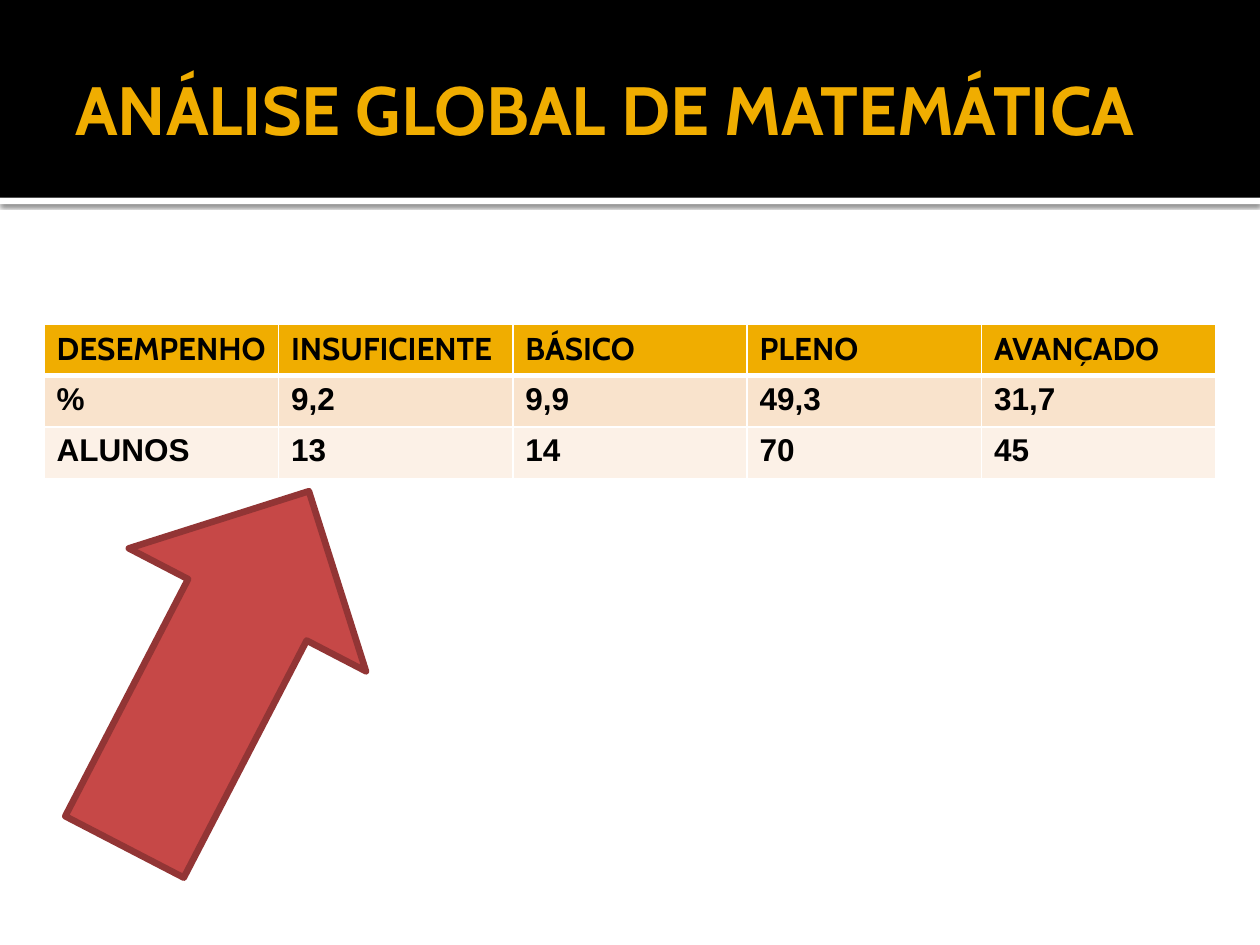
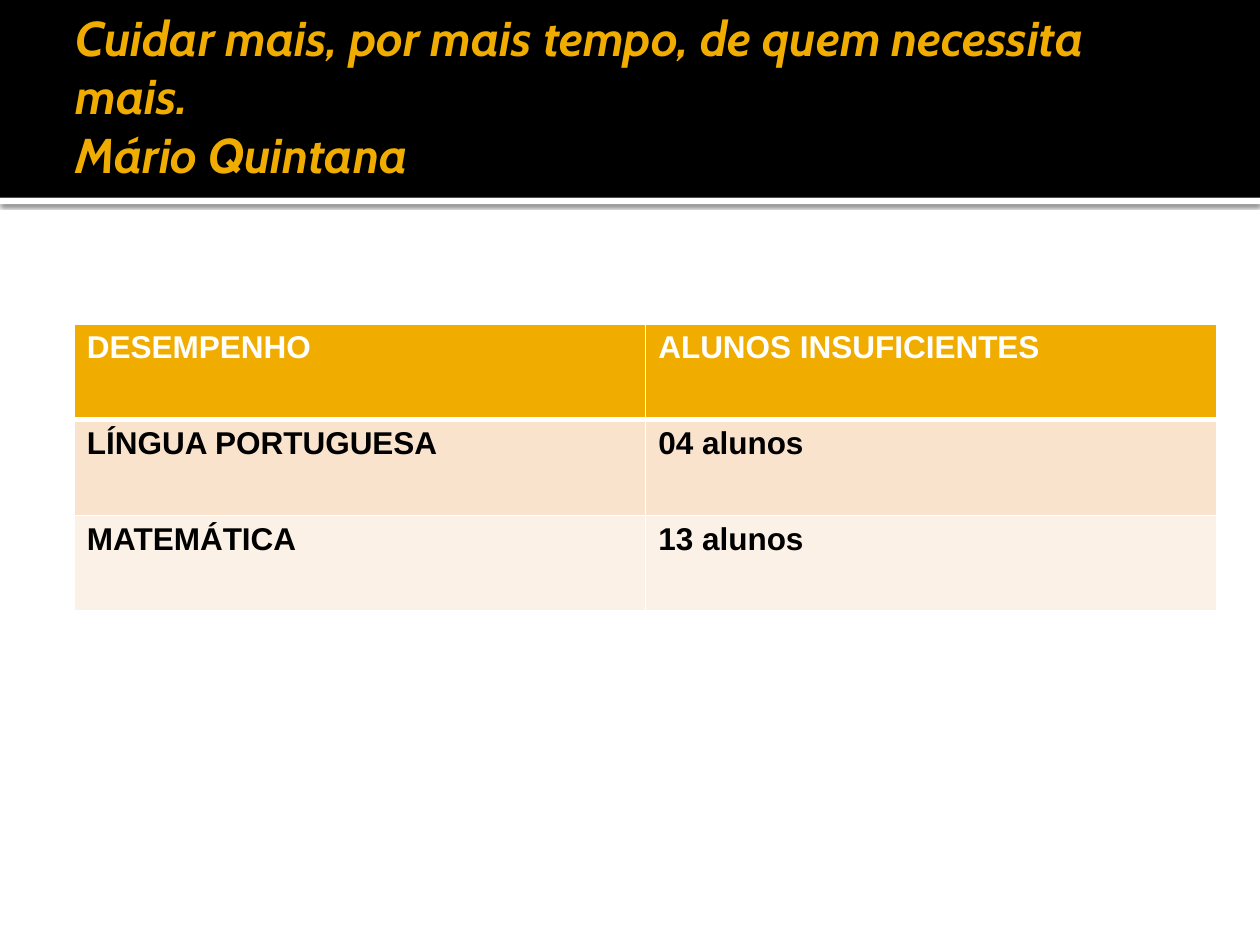
from pptx import Presentation
from pptx.util import Inches, Pt
from pptx.dml.color import RGBColor
from pptx.enum.shapes import MSO_SHAPE as Shape
from pptx.enum.text import MSO_ANCHOR as Anchor
from pptx.oxml import parse_xml
from pptx.oxml.ns import nsdecls
from lxml.etree import SubElement

WIDE, HIGH = 10, 7.5
BAND, RULE = 1.57, 0.05
TOP = 2.57
GOLD, BLACK, WHITE = "F0AD00", "000000", "FFFFFF"
FILLS = [GOLD, "F9E3CC", "FCF1E7"]
HEAD, BODY = "Cabin", "Arial"

SLIDES = [
    dict(
        title=["ANÁLISE GLOBAL DE MATEMÁTICA"], size=39, slant=False, lift=0,
        left=0.35, width=9.3, row=0.41, font=HEAD, ink=BLACK,
        rows=[
            ("DESEMPENHO", "INSUFICIENTE", "BÁSICO", "PLENO", "AVANÇADO"),
            ("%", "9,2", "9,9", "49,3", "31,7"),
            ("ALUNOS", "13", "14", "70", "45"),
        ],
        arrow=(0.13, 4.25, 3.18, 2.12),
    ),
    dict(
        title=["Cuidar mais, por mais tempo, de quem necessita mais.",
               "Mário Quintana"], size=27.9, slant=True, lift=0.1,
        left=0.59, width=9.07, row=0.76, font=BODY, ink=WHITE,
        rows=[
            ("DESEMPENHO", "ALUNOS INSUFICIENTES"),
            ("LÍNGUA PORTUGUESA", "04 alunos"),
            ("MATEMÁTICA", "13 alunos"),
        ],
        arrow=None,
    ),
]


def paint(fill, color):
    fill.solid()
    fill.fore_color.rgb = RGBColor.from_string(color)


def write(para, text, size, font, color, slant=False):
    run = para.add_run()
    run.text = text
    face = run.font
    face.size, face.name = Pt(size), font
    face.bold, face.italic = True, slant
    paint(face.fill, color)


def draw(slide, kind, box, color):
    shape = slide.shapes.add_shape(kind, *map(Inches, box))
    shape.shadow.inherit = False
    paint(shape.fill, color)
    shape.line.fill.background()
    return shape


def add_band(slide):
    rule = draw(slide, Shape.RECTANGLE, (0, BAND, WIDE, RULE), WHITE)
    rule.shadow.inherit = True
    rule._element.spPr.append(parse_xml(
        f'<a:effectLst {nsdecls("a")}>'
        f'<a:outerShdw blurRad="{Pt(2.5)}" dist="{Pt(0.8)}" dir="5400000" rotWithShape="0">'
        f'<a:srgbClr val="{BLACK}"><a:alpha val="60000"/></a:srgbClr>'
        '</a:outerShdw></a:effectLst>'))
    draw(slide, Shape.RECTANGLE, (0, 0, WIDE, BAND), BLACK)


def add_title(slide, page):
    box = (0.5, 0.17 - page["lift"], 9, 1.37)
    frame = slide.shapes.add_textbox(*map(Inches, box)).text_frame
    frame.word_wrap = True
    frame.vertical_anchor = Anchor.MIDDLE
    frame.margin_left = Inches(0.1)
    frame.margin_right = Inches(0.05)
    for i, line in enumerate(page["title"]):
        para = frame.add_paragraph() if i else frame.paragraphs[0]
        write(para, line, page["size"], HEAD, GOLD, page["slant"])


def edge(cell, row):
    props = cell._tc.get_or_add_tcPr()
    wide = {"T": 3 if row == 1 else 1, "B": 3 if row == 0 else 1}
    for side in "LRTB":
        props.append(parse_xml(
            f'<a:ln{side} {nsdecls("a")} w="{Pt(wide.get(side, 1))}"><a:solidFill>'
            f'<a:srgbClr val="{WHITE}"/></a:solidFill></a:ln{side}>'))


def add_grid(slide, page):
    rows = page["rows"]
    box = (page["left"], TOP, page["width"], page["row"] * len(rows))
    grid = slide.shapes.add_table(len(rows), len(rows[0]), *map(Inches, box)).table
    for r, texts in enumerate(rows):
        font, ink = (BODY, BLACK) if r else (page["font"], page["ink"])
        for c, text in enumerate(texts):
            cell = grid.cell(r, c)
            edge(cell, r)
            paint(cell.fill, FILLS[r])
            write(cell.text_frame.paragraphs[0], text, 18, font, ink)


def add_arrow(slide, box):
    arrow = draw(slide, Shape.RIGHT_ARROW, box, "C64847")
    arrow.rotation = 297.4
    paint(arrow.line.fill, "923535")
    arrow.line.width = Pt(3.78)
    line = arrow.line._get_or_add_ln()
    SubElement(line, line.tag[:-2] + "round")


def main():
    deck = Presentation()
    deck.slide_width, deck.slide_height = Inches(WIDE), Inches(HIGH)
    for page in SLIDES:
        slide = deck.slides.add_slide(deck.slide_layouts[6])
        paint(slide.background.fill, WHITE)
        add_band(slide)
        add_title(slide, page)
        add_grid(slide, page)
        if page["arrow"]:
            add_arrow(slide, page["arrow"])
    deck.save("out.pptx")


if __name__ == "__main__":
    main()
